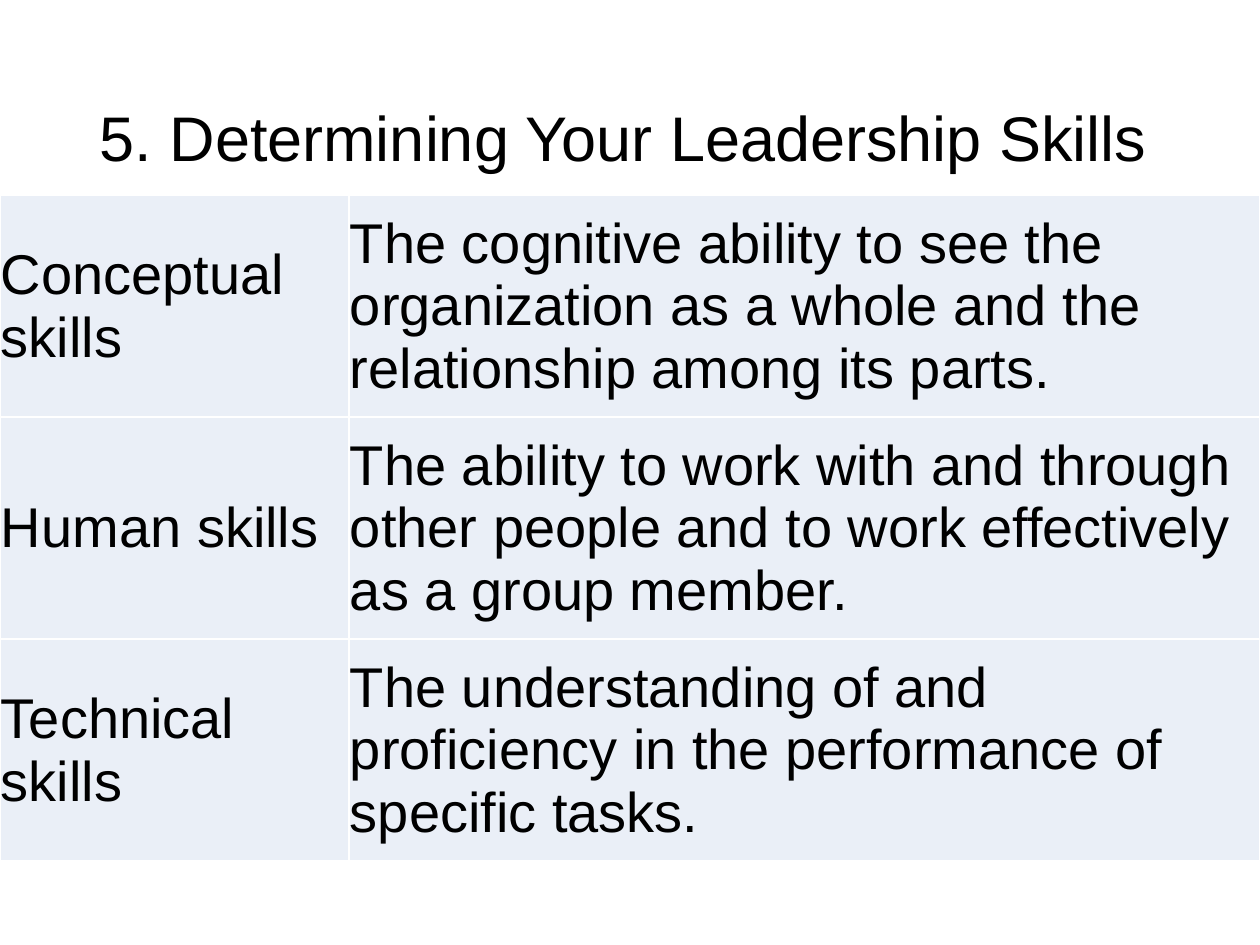
from pptx import Presentation
from pptx.dml.color import RGBColor
from pptx.enum.text import MSO_ANCHOR, PP_ALIGN
from pptx.util import Pt

PX = 914400 // 126
BLACK = RGBColor(0x00, 0x00, 0x00)
PALE_BLUE = RGBColor(0xEA, 0xEF, 0xF7)
SKILLS = [
    ("Conceptual skills",
     "The cognitive ability to see the organization as a whole and the relationship among its parts."),
    ("Human skills",
     "The ability to work with and through other people and to work effectively as a group member."),
    ("Technical skills",
     "The understanding of and proficiency in the performance of specific tasks."),
]


def set_font(p, size):
    p.font.name = "Arial"
    p.font.size = Pt(size)
    p.font.color.rgb = BLACK


prs = Presentation()
prs.slide_width, prs.slide_height = 1260 * PX, 945 * PX
s = prs.slides.add_slide(prs.slide_layouts[5])

title = s.shapes.title
title.left, title.top, title.width, title.height = 87 * PX, 50 * PX, 1086 * PX, 183 * PX
tf = title.text_frame
tf.text = "5. Determining Your Leadership Skills"
tf.vertical_anchor = MSO_ANCHOR.MIDDLE
p = tf.paragraphs[0]
p.alignment = PP_ALIGN.LEFT
p.line_spacing = 0.9
set_font(p, 36)

table = s.shapes.add_table(len(SKILLS), 2, 0, 195 * PX, 1260 * PX, 666 * PX).table
table.first_row = False
table.horz_banding = False
for column, width in zip(table.columns, (349, 911)):
    column.width = width * PX
for row, texts in zip(table.rows, SKILLS):
    row.height = 222 * PX
    for cell, text in zip(row.cells, texts):
        cell.text = text
        cell.fill.solid()
        cell.fill.fore_color.rgb = PALE_BLUE
        cell.vertical_anchor = MSO_ANCHOR.MIDDLE
        cell.margin_left = cell.margin_right = cell.margin_top = PX
        cell.margin_bottom = 0
        set_font(cell.text_frame.paragraphs[0], 32)

prs.save("out.pptx")
